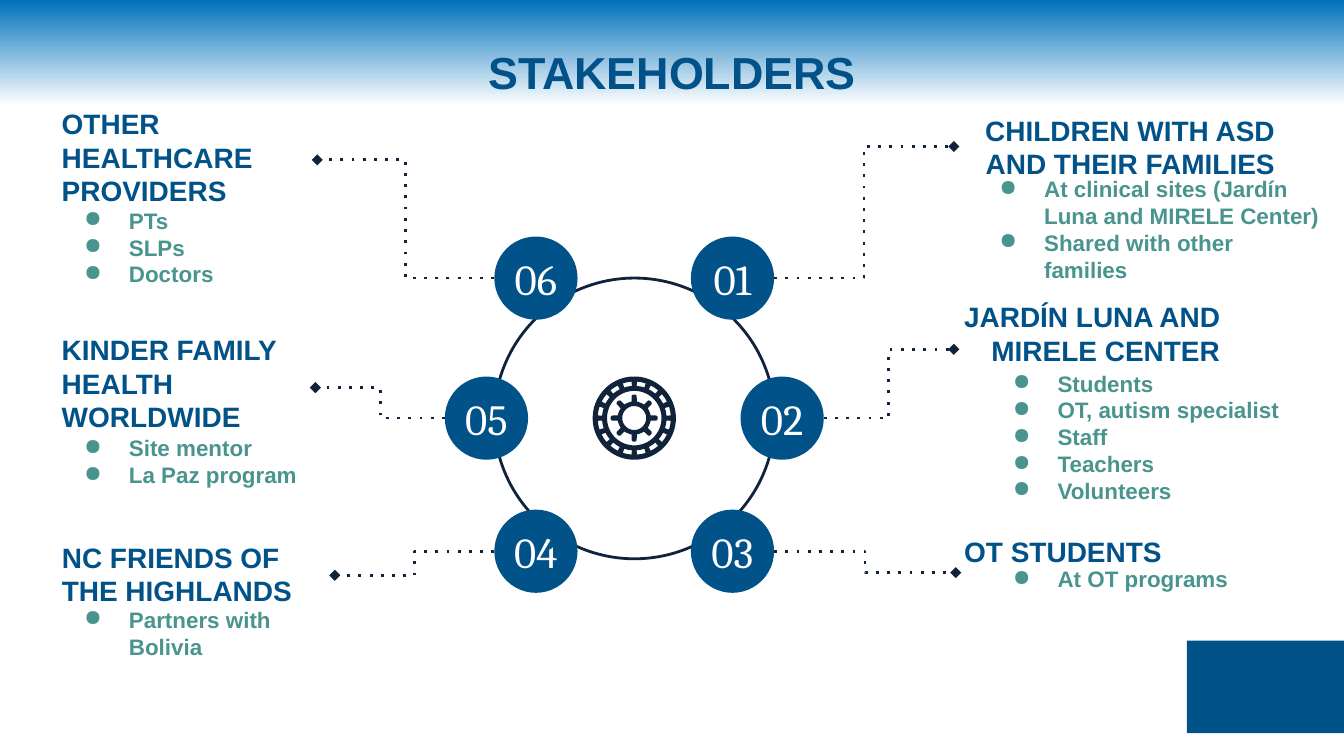
"""Build the stakeholders slide: a numbered ring with six dotted callouts."""
from copy import deepcopy
from math import cos, radians, sin
from typing import NamedTuple

from lxml.etree import SubElement
from pptx import Presentation
from pptx.dml.color import RGBColor
from pptx.enum.shapes import MSO_CONNECTOR, MSO_SHAPE
from pptx.enum.text import MSO_ANCHOR, PP_ALIGN
from pptx.oxml.ns import qn
from pptx.util import Pt

BLUE = RGBColor(0x00, 0x52, 0x88)
SKY = RGBColor(0x00, 0x71, 0xBB)
NAVY = RGBColor(0x11, 0x22, 0x3B)
TEAL = RGBColor(0x49, 0x94, 0x8E)
WHITE = RGBColor(0xFF, 0xFF, 0xFF)
ELLIPSE, RECTANGLE = MSO_SHAPE.OVAL, MSO_SHAPE.RECTANGLE
ELBOW = MSO_CONNECTOR.ELBOW
MIDDLE = MSO_ANCHOR.MIDDLE
LEFT, CENTER, RIGHT = PP_ALIGN.LEFT, PP_ALIGN.CENTER, PP_ALIGN.RIGHT
SANS, SERIF = "Arial", "Cambria"
CENTER_X, CENTER_Y = 339.8, 224
BADGE_SIZE = 44.6


class Area(NamedTuple):
    left: float
    top: float
    width: float
    height: float


class Stakeholder(NamedTuple):
    number: str
    badge: tuple[float, float]
    link_end: tuple[float, float]
    heading: str
    heading_area: Area
    items: list[str]
    items_area: Area


STAKEHOLDERS = [
    Stakeholder("01", (392.4, 149), (511, 78.5),
                "CHILDREN WITH ASD AND THEIR FAMILIES", Area(511, 60, 172, 37.4),
                ["At clinical sites (Jardín Luna and MIRELE Center)", "Shared with other families"],
                Area(523.4, 103.7, 185, 38)),
    Stakeholder("02", (419, 224), (511, 187.2),
                "JARDÍN LUNA AND MIRELE CENTER", Area(511, 160, 142.6, 37.4),
                ["Students", "OT, autism specialist", "Staff", "Teachers", "Volunteers"],
                Area(530.6, 200.2, 164, 67.7)),
    Stakeholder("03", (392.4, 295.3), (512, 306.8),
                "OT STUDENTS", Area(511, 276.5, 111.4, 37.4),
                ["At OT programs"], Area(530.6, 291, 129.6, 38)),
    Stakeholder("04", (287.1, 295.3), (179.4, 308.2),
                "NC FRIENDS OF THE HIGHLANDS", Area(33.1, 288.7, 150.5, 37.4),
                ["Partners with Bolivia"], Area(33.1, 320, 129.6, 38)),
    Stakeholder("05", (260.6, 224), (169, 207.7),
                "KINDER FAMILY HEALTH WORLDWIDE", Area(33.1, 186.5, 129.6, 37.4),
                ["Site mentor", "La Paz program"], Area(33.1, 228.2, 129.6, 38)),
    Stakeholder("06", (287.1, 149), (170, 85.7),
                "OTHER HEALTHCARE PROVIDERS", Area(33.1, 65.5, 129.6, 37.4),
                ["PTs", "SLPs", "Doctors"], Area(33.1, 109.4, 129.6, 46)),
]


def points(area: Area) -> list[int]:
    return [Pt(length) for length in area]


def write(frame, lines: list[str], size: float, color: RGBColor, align=LEFT,
          font: str = SANS, bold: bool = True, bulleted: bool = False) -> None:
    frame.text = "\n".join(lines)
    frame.word_wrap = True
    frame.vertical_anchor = MIDDLE
    frame.margin_left = frame.margin_right = frame.margin_top = frame.margin_bottom = 0
    for para in frame.paragraphs:
        para.alignment = align
        if bulleted:
            properties = para._p.get_or_add_pPr()
            properties.set("marL", str(Pt(36)))
            properties.set("indent", str(Pt(-24)))
            bullet_color = SubElement(properties, qn("a:buClr"))
            SubElement(bullet_color, qn("a:srgbClr"), val=str(color))
            SubElement(properties, qn("a:buChar"), char="●")
        for span in para.runs:
            span.font.name, span.font.size, span.font.bold = font, Pt(size), bold
            span.font.color.rgb = color


def add_solid(page, kind, area: Area, color: RGBColor):
    shape = page.shapes.add_shape(kind, *points(area))
    shape.shadow.inherit = False
    shape.fill.solid()
    shape.fill.fore_color.rgb = color
    shape.line.fill.background()
    return shape


def add_link(page, start: tuple[float, float], end: tuple[float, float]) -> None:
    link = page.shapes.add_connector(ELBOW, *(Pt(value) for value in start + end))
    link.line.color.rgb = NAVY
    link.line.width = Pt(1.5)
    outline = link.line._get_or_add_ln()
    SubElement(outline, qn("a:prstDash"), val="dot")
    SubElement(outline, qn("a:tailEnd"), type="diamond")
    SubElement(link._element.spPr, qn("a:effectLst"))


def polar(radius: float, degrees: float) -> tuple[int, int]:
    angle = radians(degrees)
    return Pt(CENTER_X + radius * cos(angle)), Pt(CENTER_Y + radius * sin(angle))


def circle(radius: float) -> list[tuple[int, int]]:
    return [polar(radius, degrees) for degrees in range(0, 360, 5)]


def slot(middle: float) -> list[tuple[int, int]]:
    offsets = (-7, 0, 7)
    return ([polar(19.6, middle + offset) for offset in offsets]
            + [polar(17.3, middle - offset) for offset in offsets])


def gear() -> list[tuple[int, int]]:
    tooth = ((8.9, -9), (12, -6.5), (12.6, -3), (12.6, 3), (12, 6.5), (8.9, 9), (8.9, 16), (8.9, 29))
    return [polar(radius, 45 * index + offset) for index in range(8) for radius, offset in tooth]


def add_outlines(page, outlines: list[list[tuple[int, int]]]) -> None:
    builder = page.shapes.build_freeform(*outlines[0][0])
    for outline in outlines:
        builder.move_to(*outline[0])
        builder.add_line_segments(outline[1:], close=True)
    shape = builder.convert_to_shape()
    shape.shadow.inherit = False
    shape.fill.solid()
    shape.fill.fore_color.rgb = NAVY
    shape.line.fill.background()


def paint_background(page) -> None:
    fill = page.background.fill
    fill.gradient()
    fill.gradient_angle = 270
    for stop, color, position in zip(fill.gradient_stops, (SKY, WHITE), (0, 0.14)):
        stop.color.rgb = color
        stop.position = position
    stops = page._element.find(".//" + qn("a:gsLst"))
    final_stop = deepcopy(stops[-1])
    final_stop.set("pos", "100000")
    stops.append(final_stop)


def add_stakeholder(page, item: Stakeholder) -> None:
    x, y = item.badge
    radius = BADGE_SIZE / 2
    on_right = x > CENTER_X
    badge = add_solid(page, ELLIPSE, Area(x - radius, y - radius, BADGE_SIZE, BADGE_SIZE), BLUE)
    write(badge.text_frame, [item.number], 23, WHITE, CENTER, SERIF, bold=False)
    add_link(page, (x + radius if on_right else x - radius, y), item.link_end)
    heading = page.shapes.add_textbox(*points(item.heading_area))
    write(heading.text_frame, [item.heading], 15, BLUE, RIGHT if on_right else LEFT)
    box = page.shapes.add_textbox(*points(item.items_area))
    write(box.text_frame, item.items, 12, TEAL, bulleted=True)


def main() -> None:
    deck = Presentation()
    deck.slide_width, deck.slide_height = Pt(720), Pt(405)
    page = deck.slides.add_slide(deck.slide_layouts[5])
    paint_background(page)
    add_solid(page, RECTANGLE, Area(635.8, 343.2, 84.2, 49.6), BLUE)
    title = page.shapes.title
    title.left, title.top, title.width, title.height = points(Area(36, 4.5, 648, 67.5))
    write(title.text_frame, ["STAKEHOLDERS"], 24, BLUE, CENTER)
    ring = add_solid(page, ELLIPSE, Area(264.7, 149, 150.4, 150.4), NAVY)
    ring.fill.background()
    ring.line.color.rgb = NAVY
    ring.line.width = Pt(1.5)
    slots = [slot(22.5 * index + 11.25) for index in range(16)]
    add_outlines(page, [circle(22.3), circle(14.6), *slots])
    add_outlines(page, [gear(), circle(6.4)])
    for item in STAKEHOLDERS:
        add_stakeholder(page, item)
    deck.save("out.pptx")


if __name__ == "__main__":
    main()
